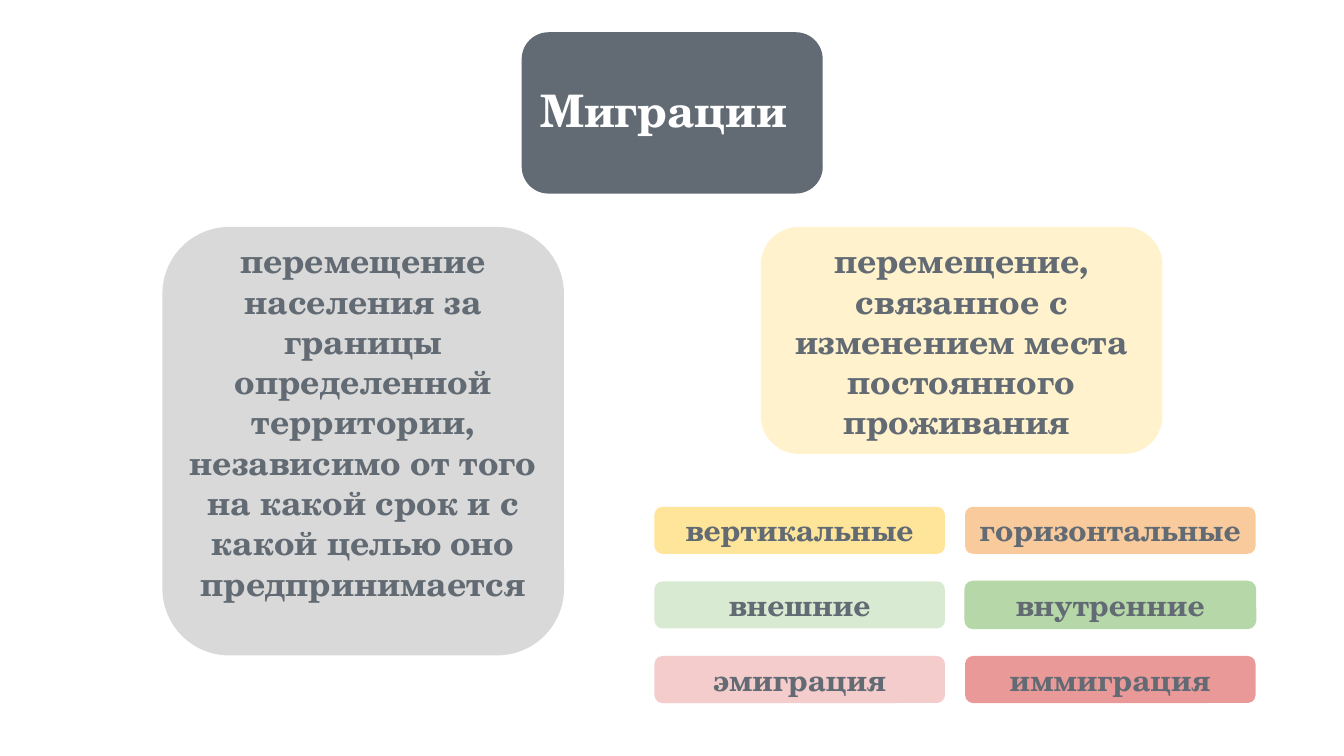
from pptx import Presentation
from pptx.dml.color import RGBColor
from pptx.enum import shapes, text
from pptx.util import Cm, Pt

SLATE = "626B73"


def color(hex_value):
    return RGBColor.from_string(hex_value)


def add_text(words, *, left, top, width, height, size, ink=SLATE,
             align=text.PP_ALIGN.CENTER):
    box = slide.shapes.add_textbox(Cm(left), Cm(top), Cm(width), Cm(height))
    frame = box.text_frame
    frame.word_wrap = True
    frame.margin_left = frame.margin_right = Cm(0.25)
    frame.margin_top = frame.margin_bottom = Cm(0.25)
    paragraph = frame.paragraphs[0]
    paragraph.alignment = align
    run = paragraph.add_run()
    run.text = words
    run.font.name = "TeX Gyre Schola"
    run.font.size = Pt(size)
    run.font.bold = True
    run.font.color.rgb = color(ink)


prs = Presentation()
prs.slide_width, prs.slide_height = Cm(25.4), Cm(14.29)
slide = prs.slides.add_slide(prs.slide_layouts[6])

# Grid of migration types: name, fill, extra label width on each side
types = [
    [("вертикальные", "FFE599", 0), ("горизонтальные", "F9CB9C", 0.5)],
    [("внешние", "D9EAD3", 0), ("внутренние", "B6D7A8", 0)],
    [("эмиграция", "F4CCCC", 0), ("иммиграция", "EA9999", 0)],
]
grid_left, grid_top = 12.37, 9.58
type_width, type_height = 5.49, 0.89
column_step, row_step = 5.87, 1.41

# Heading and definition cards: left, top, width, height, fill
cards = [
    (9.86, 0.61, 5.69, 3.05, SLATE),
    (3.07, 4.29, 7.59, 8.1, "D9D9D9"),
    (14.38, 4.29, 7.59, 4.29, "FFF2CC"),
]
labels = []
for row, pair in enumerate(types):
    for column, (name, fill, extra) in enumerate(pair):
        left = grid_left + column * column_step
        top = grid_top + row * row_step
        cards.append((left, top, type_width, type_height, fill))
        labels.append((name, left - extra, top - 0.15, type_width + 2 * extra))

# Rounded backgrounds
for left, top, width, height, fill in cards:
    card = slide.shapes.add_shape(shapes.MSO_SHAPE.ROUNDED_RECTANGLE,
                                  Cm(left), Cm(top), Cm(width), Cm(height))
    card.shadow.inherit = False
    card.fill.solid()
    card.fill.fore_color.rgb = color(fill)
    if fill == "B6D7A8":
        card.line.color.rgb = color(fill)
        card.line.width = Pt(0.75)
    else:
        card.line.fill.background()

# Heading
add_text("Миграции", left=9.96, top=1.32, width=5.49, height=1.6, size=24,
         ink="FFFFFF", align=text.PP_ALIGN.LEFT)

# Definitions
add_text("перемещение, связанное с изменением места постоянного проживания ",
         left=14.38, top=4.29, width=7.59, height=1.6, size=18)
add_text("перемещение населения за границы определенной территории, "
         "независимо от того на какой срок и с какой целью оно предпринимается",
         left=3.07, top=4.29, width=7.59, height=1.6, size=18)

# Type names
for name, left, top, width in labels:
    add_text(name, left=left, top=top, width=width, height=1.19, size=16)

prs.save("out.pptx")
